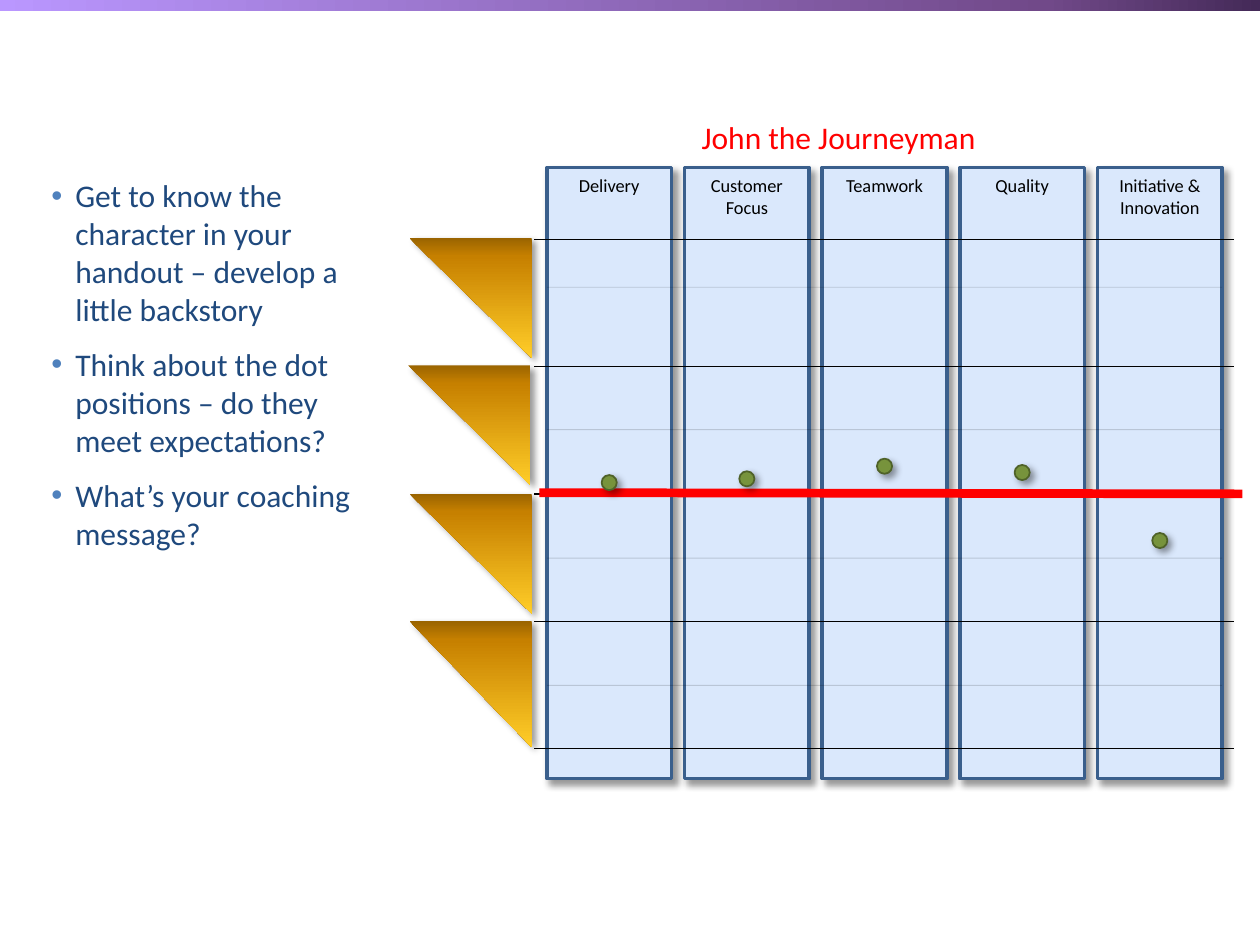
from dataclasses import dataclass

from lxml.etree import SubElement
from pptx import Presentation
from pptx.dml.color import RGBColor
from pptx.enum.shapes import MSO_CONNECTOR, MSO_SHAPE
from pptx.enum.text import MSO_ANCHOR, PP_ALIGN
from pptx.oxml.ns import qn
from pptx.util import Inches, Pt

FONT = "Calibri"
BLACK = RGBColor(0x00, 0x00, 0x00)
WHITE = RGBColor(0xFF, 0xFF, 0xFF)
RED = RGBColor(0xFF, 0x00, 0x00)
NAVY = RGBColor(0x1F, 0x49, 0x7D)
BULLET_BLUE = RGBColor(0x4F, 0x81, 0xBD)
COLUMN_FILL = RGBColor(0xDA, 0xE8, 0xFC)
COLUMN_EDGE = RGBColor(0x3A, 0x5F, 0x8C)
DOT_FILL = RGBColor(0x77, 0x93, 0x3C)
DOT_EDGE = RGBColor(0x4F, 0x62, 0x28)
PURPLES = [
    (0, RGBColor(0x44, 0x2A, 0x58)),
    (17, RGBColor(0x71, 0x49, 0x89)),
    (100, RGBColor(0xBA, 0x97, 0xFF)),
]
GOLDS = [
    (0, RGBColor(0x9A, 0x64, 0x00)),
    (15, RGBColor(0xC6, 0x80, 0x00)),
    (100, RGBColor(0xFF, 0xCD, 0x28)),
]

COLUMN_LEFT, COLUMN_TOP, COLUMN_WIDTH, COLUMN_HEIGHT = 4.34, 1.33, 0.99, 4.85
COLUMN_PITCH = (8.71 - COLUMN_LEFT) / 4
LEVEL_TOP, LEVEL_PITCH = 1.9, 1.01
DOT_SIZE = 0.12


@dataclass
class Skill:
    label: str
    dot_top: float


@dataclass
class Wedge:
    left: float
    top: float
    height: float = 0.95


SKILLS = [
    Skill("Delivery", 3.77),
    Skill("Customer Focus", 3.74),
    Skill("Teamwork", 3.64),
    Skill("Quality", 3.69),
    Skill("Initiative & Innovation", 4.23),
]
WEDGES = [Wedge(3.25, 1.89), Wedge(3.24, 2.9), Wedge(3.25, 3.92), Wedge(3.25, 4.93, 1)]
HALF_LEVELS = [2.28, 3.41, 4.43, 5.44]
PROMPTS = [
    "Get to know the character in your handout – develop a little backstory",
    "Think about the dot positions – do they meet expectations?",
    "What’s your coaching message?",
]


def add_color(parent, color: RGBColor, alpha: int = 100) -> None:
    tint = SubElement(parent, qn("a:srgbClr"), val=str(color))
    if alpha < 100:
        SubElement(tint, qn("a:alpha"), val=str(alpha * 1000))


def add_flat(slide, kind, left: float, top: float, width: float, height: float):
    shape = slide.shapes.add_shape(
        kind, Inches(left), Inches(top), Inches(width), Inches(height)
    )
    shape.shadow.inherit = False
    shape.line.fill.background()
    return shape


def paint(shape, fill: RGBColor, edge: RGBColor, weight: float) -> None:
    shape.fill.solid()
    shape.fill.fore_color.rgb = fill
    shape.line.color.rgb = edge
    shape.line.width = Pt(weight)


def paint_gradient(shape, stops: list[tuple[int, RGBColor]], angle: int) -> None:
    shape.fill.gradient()
    shape.fill.gradient_angle = angle
    stop_list = shape._element.spPr.find(qn("a:gradFill")).find(qn("a:gsLst"))
    stop_list.clear()
    for position, color in stops:
        stop = SubElement(stop_list, qn("a:gs"), pos=str(position * 1000))
        add_color(stop, color)


def cast_shadow(shape) -> None:
    effects = shape._element.spPr.find(qn("a:effectLst"))
    shadow = SubElement(
        effects, qn("a:outerShdw"), blurRad=str(Pt(4)), dist=str(Pt(3)),
        dir=str(45 * 60000), algn="tl", rotWithShape="0",
    )
    add_color(shadow, BLACK, 40)


def style_text(paragraph, size: float, color: RGBColor) -> None:
    for run in paragraph.runs:
        run.font.name = FONT
        run.font.size = Pt(size)
        run.font.color.rgb = color


def add_rule(slide, start: tuple[float, float], end: tuple[float, float],
             color: RGBColor, weight: float, alpha: int = 100) -> None:
    rule = slide.shapes.add_connector(
        MSO_CONNECTOR.STRAIGHT, *(Inches(value) for value in start + end)
    )
    rule.line.color.rgb = color
    rule.line.width = Pt(weight)
    properties = rule._element.spPr
    if alpha < 100:
        tint = next(properties.iter(qn("a:srgbClr")))
        SubElement(tint, qn("a:alpha"), val=str(alpha * 1000))
    SubElement(properties, qn("a:effectLst"))


def add_column(slide, index: int, skill: Skill) -> None:
    column = add_flat(slide, MSO_SHAPE.RECTANGLE, COLUMN_LEFT + index * COLUMN_PITCH,
                      COLUMN_TOP, COLUMN_WIDTH, COLUMN_HEIGHT)
    paint(column, COLUMN_FILL, COLUMN_EDGE, 2)
    cast_shadow(column)
    frame = column.text_frame
    frame.text = skill.label
    frame.word_wrap = True
    frame.vertical_anchor = MSO_ANCHOR.TOP
    frame.paragraphs[0].alignment = PP_ALIGN.CENTER
    style_text(frame.paragraphs[0], 10.5, BLACK)


def add_dot(slide, index: int, skill: Skill) -> None:
    left = COLUMN_LEFT + index * COLUMN_PITCH + (COLUMN_WIDTH - DOT_SIZE) / 2
    dot = add_flat(slide, MSO_SHAPE.OVAL, left, skill.dot_top, DOT_SIZE, DOT_SIZE)
    paint(dot, DOT_FILL, DOT_EDGE, 1)
    cast_shadow(dot)


def add_wedge(slide, wedge: Wedge) -> None:
    triangle = add_flat(slide, MSO_SHAPE.RIGHT_TRIANGLE, wedge.left, wedge.top,
                        0.97, wedge.height)
    triangle.rotation = 180
    paint_gradient(triangle, GOLDS, 90)
    cast_shadow(triangle)


def add_heading(slide, text: str) -> None:
    heading = slide.shapes.add_textbox(Inches(5.47), Inches(0.89), Inches(3.85), Inches(0.4))
    heading.text_frame.text = text
    heading.text_frame.word_wrap = True
    style_text(heading.text_frame.paragraphs[0], 18, RED)


def add_prompts(slide, prompts: list[str]) -> None:
    panel = add_flat(slide, MSO_SHAPE.RECTANGLE, 0.31, 1.35, 2.83, 4.94)
    panel.fill.solid()
    panel.fill.fore_color.rgb = WHITE
    frame = panel.text_frame
    frame.text = "\n".join(prompts)
    frame.word_wrap = True
    frame.vertical_anchor = MSO_ANCHOR.TOP
    for index, paragraph in enumerate(frame.paragraphs):
        properties = paragraph._p.get_or_add_pPr()
        properties.set("marL", str(Inches(0.19)))
        properties.set("indent", str(-Inches(0.19)))
        add_color(SubElement(properties, qn("a:buClr")), BULLET_BLUE)
        SubElement(properties, qn("a:buFont"), typeface="Arial")
        SubElement(properties, qn("a:buChar"), char="•")
        paragraph.alignment = PP_ALIGN.LEFT
        paragraph.space_before = Pt(10 if index else 0)
        style_text(paragraph, 18, NAVY)


def main() -> None:
    deck = Presentation()
    deck.slide_width, deck.slide_height = Inches(10), Inches(7.5)
    slide = deck.slides.add_slide(deck.slide_layouts[6])

    banner = add_flat(slide, MSO_SHAPE.RECTANGLE, -0.02, -0.02, 10.02, 0.11)
    paint_gradient(banner, PURPLES, 180)
    for index, skill in enumerate(SKILLS):
        add_column(slide, index, skill)
    for level in range(5):
        height = LEVEL_TOP + level * LEVEL_PITCH
        add_rule(slide, (4.24, height), (9.79, height), BLACK, 0.75)
    for height in HALF_LEVELS:
        add_rule(slide, (4.34, height), (9.7, height), BLACK, 0.5, 15)
    for wedge in WEDGES:
        add_wedge(slide, wedge)
    add_heading(slide, "John the Journeyman")
    add_rule(slide, (9.86, 3.92), (4.28, 3.91), RED, 5)
    for index, skill in enumerate(SKILLS):
        add_dot(slide, index, skill)
    add_prompts(slide, PROMPTS)
    deck.save("out.pptx")


if __name__ == "__main__":
    main()
